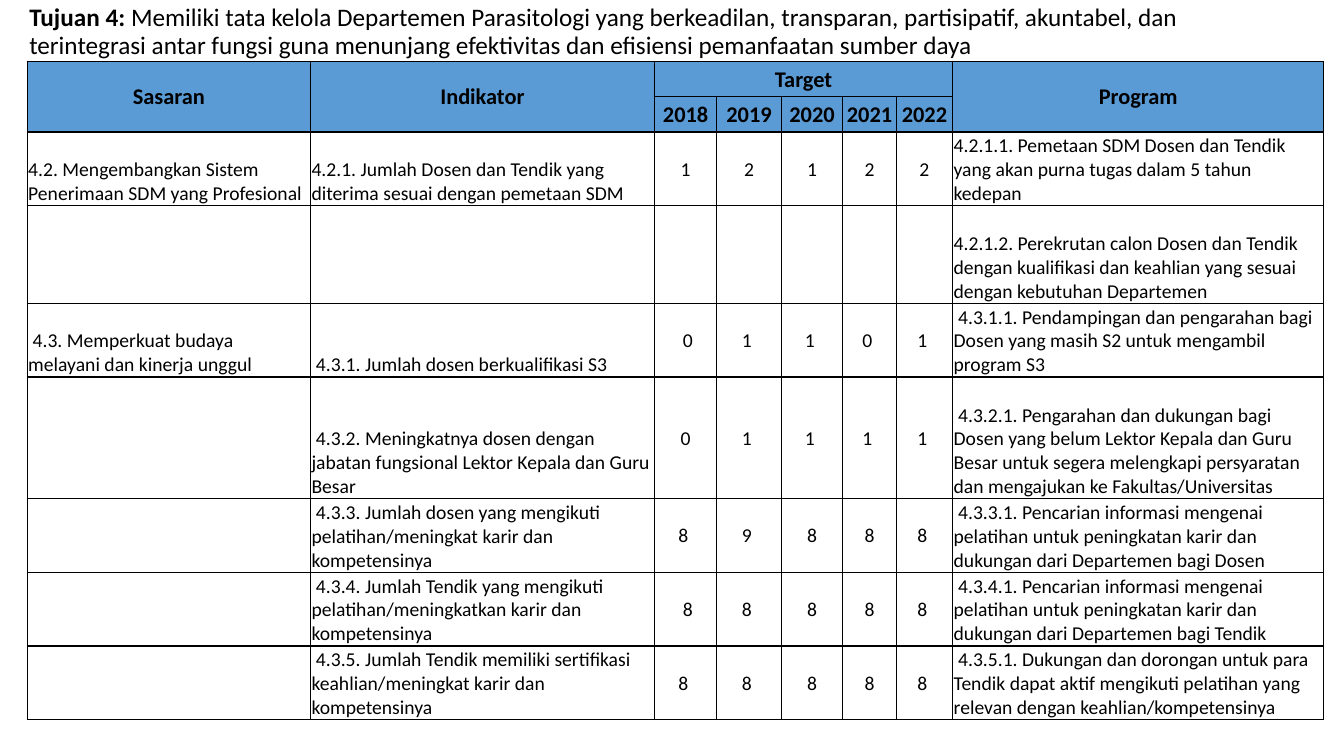
from dataclasses import dataclass

from lxml.etree import SubElement
from pptx import Presentation
from pptx.dml.color import RGBColor
from pptx.enum.text import MSO_ANCHOR, MSO_AUTO_SIZE, PP_ALIGN
from pptx.oxml.ns import qn
from pptx.util import Inches, Pt

FONT = "Calibri"
BLACK = "000000"
BLUE = "5B9BD5"
WIDTHS = [2.81, 3.41, 0.62, 0.64, 0.61, 0.53, 0.56, 3.68]
HEIGHTS = [0.35, 0.35, 0.73, 0.97, 0.73, 1.21, 0.73, 0.73, 0.73]
YEARS = range(2018, 2023)
FIRST, LAST = 2, 6  # columns of the yearly targets


@dataclass
class Plan:
    goal: str
    sign: str
    marks: tuple[str, ...]
    task: str


@dataclass
class Head:
    text: str
    row: int
    col: int
    end_row: int
    end_col: int


PLANS = [
    Plan("4.2. Mengembangkan Sistem Penerimaan SDM yang Profesional",
         "4.2.1. Jumlah Dosen dan Tendik yang diterima sesuai dengan pemetaan SDM",
         ("1", "2", "1", "2", "2"),
         "4.2.1.1. Pemetaan SDM Dosen dan Tendik yang akan purna tugas dalam 5 tahun kedepan"),
    Plan("", "", ("",) * 5,
         "4.2.1.2. Perekrutan calon Dosen dan Tendik dengan kualifikasi dan keahlian "
         "yang sesuai dengan kebutuhan Departemen"),
    Plan(" 4.3. Memperkuat budaya melayani dan kinerja unggul",
         " 4.3.1. Jumlah dosen berkualifikasi S3",
         (" 0", "1 ", "1 ", "0 ", "1 "),
         " 4.3.1.1. Pendampingan dan pengarahan bagi Dosen yang masih S2 "
         "untuk mengambil program S3"),
    Plan("",
         " 4.3.2. Meningkatnya dosen dengan jabatan fungsional Lektor Kepala dan Guru Besar",
         ("0", "1 ", "1 ", "1 ", "1 "),
         " 4.3.2.1. Pengarahan dan dukungan bagi Dosen yang belum Lektor Kepala dan Guru Besar "
         "untuk segera melengkapi persyaratan dan mengajukan ke Fakultas/Universitas"),
    Plan("",
         " 4.3.3. Jumlah dosen yang mengikuti pelatihan/meningkat karir dan kompetensinya",
         ("8 ", "9 ", "8", "8", "8 "),
         " 4.3.3.1. Pencarian informasi mengenai pelatihan untuk peningkatan karir "
         "dan dukungan dari Departemen bagi Dosen"),
    Plan("",
         " 4.3.4. Jumlah Tendik yang mengikuti pelatihan/meningkatkan karir dan kompetensinya",
         (" 8", "8 ", "8", "8", "8 "),
         " 4.3.4.1. Pencarian informasi mengenai pelatihan untuk peningkatan karir "
         "dan dukungan dari Departemen bagi Tendik"),
    Plan("",
         " 4.3.5. Jumlah Tendik memiliki sertifikasi keahlian/meningkat karir dan kompetensinya",
         ("8 ", "8 ", "8", "8", "8 "),
         " 4.3.5.1. Dukungan dan dorongan untuk para Tendik dapat aktif mengikuti pelatihan "
         "yang relevan dengan keahlian/kompetensinya"),
]

HEADS = [
    Head("Sasaran", 0, 0, 1, 0),
    Head("Indikator", 0, 1, 1, 1),
    Head("Target", 0, FIRST, 0, LAST),
    Head("Program", 0, 7, 1, 7),
    *[Head(str(year), 1, col, 1, col) for col, year in enumerate(YEARS, FIRST)],
]


def paint(fmt, color: str) -> None:
    fmt.rgb = RGBColor.from_string(color)


def add_run(par, text: str, size: float, bold: bool) -> None:
    run = par.add_run()
    run.text = text
    run.font.name = FONT
    run.font.size = Pt(size)
    run.font.bold = bold
    paint(run.font.color, BLACK)


def add_edges(cell) -> None:
    props = cell._tc.get_or_add_tcPr()
    for side in ("a:lnL", "a:lnR", "a:lnT", "a:lnB"):
        line = SubElement(props, qn(side), w=str(Pt(1)))
        SubElement(SubElement(line, qn("a:solidFill")), qn("a:srgbClr"), val=BLACK)


def style_cell(cell, head: bool) -> None:
    add_edges(cell)
    cell.margin_left = cell.margin_right = cell.margin_top = Inches(0.01)
    cell.margin_bottom = 0
    if head:
        cell.fill.solid()
        paint(cell.fill.fore_color, BLUE)
    else:
        cell.fill.background()


def fill_cell(cell, text: str, size: float, bold: bool, center: bool) -> None:
    cell.vertical_anchor = MSO_ANCHOR.MIDDLE if center else MSO_ANCHOR.BOTTOM
    par = cell.text_frame.paragraphs[0]
    par.alignment = PP_ALIGN.CENTER if center else PP_ALIGN.LEFT
    if text:
        add_run(par, text, size, bold)


def add_title(slide) -> None:
    title = slide.shapes.title
    title.left, title.top = Inches(0.19), Inches(0.03)
    title.width, title.height = Inches(12.57), Inches(0.58)
    frame = title.text_frame
    frame.word_wrap = True
    frame.auto_size = MSO_AUTO_SIZE.NONE
    frame.vertical_anchor = MSO_ANCHOR.MIDDLE
    par = frame.paragraphs[0]
    par.alignment = PP_ALIGN.LEFT
    par.line_spacing = 0.9
    add_run(par, "Tujuan 4: ", 18, True)
    add_run(par, "Memiliki tata kelola Departemen Parasitologi yang berkeadilan, transparan, "
                 "partisipatif, akuntabel, dan terintegrasi antar fungsi guna menunjang "
                 "efektivitas dan efisiensi pemanfaatan sumber daya", 18, False)


def add_plans(slide) -> None:
    table = slide.shapes.add_table(
        len(HEIGHTS), len(WIDTHS), Inches(0.27), Inches(0.61),
        Inches(sum(WIDTHS)), Inches(sum(HEIGHTS))).table
    table.first_row = table.horz_banding = False
    for col, width in zip(table.columns, WIDTHS):
        col.width = Inches(width)
    for index, (row, height) in enumerate(zip(table.rows, HEIGHTS)):
        row.height = Inches(height)
        for cell in row.cells:
            style_cell(cell, index < 2)

    # Header rows
    for head in HEADS:
        cell = table.cell(head.row, head.col)
        end = table.cell(head.end_row, head.end_col)
        if (head.row, head.col) != (head.end_row, head.end_col):
            cell.merge(end)
        fill_cell(cell, head.text, 16, True, True)

    # Plan rows
    for row, plan in enumerate(PLANS, 2):
        for col, text in enumerate((plan.goal, plan.sign, *plan.marks, plan.task)):
            fill_cell(table.cell(row, col), text, 14, False, FIRST <= col <= LAST)


def main() -> None:
    deck = Presentation()
    deck.slide_width, deck.slide_height = Inches(13.33), Inches(7.5)
    slide = deck.slides.add_slide(deck.slide_layouts[5])
    add_title(slide)
    add_plans(slide)
    deck.save("out.pptx")


if __name__ == "__main__":
    main()
